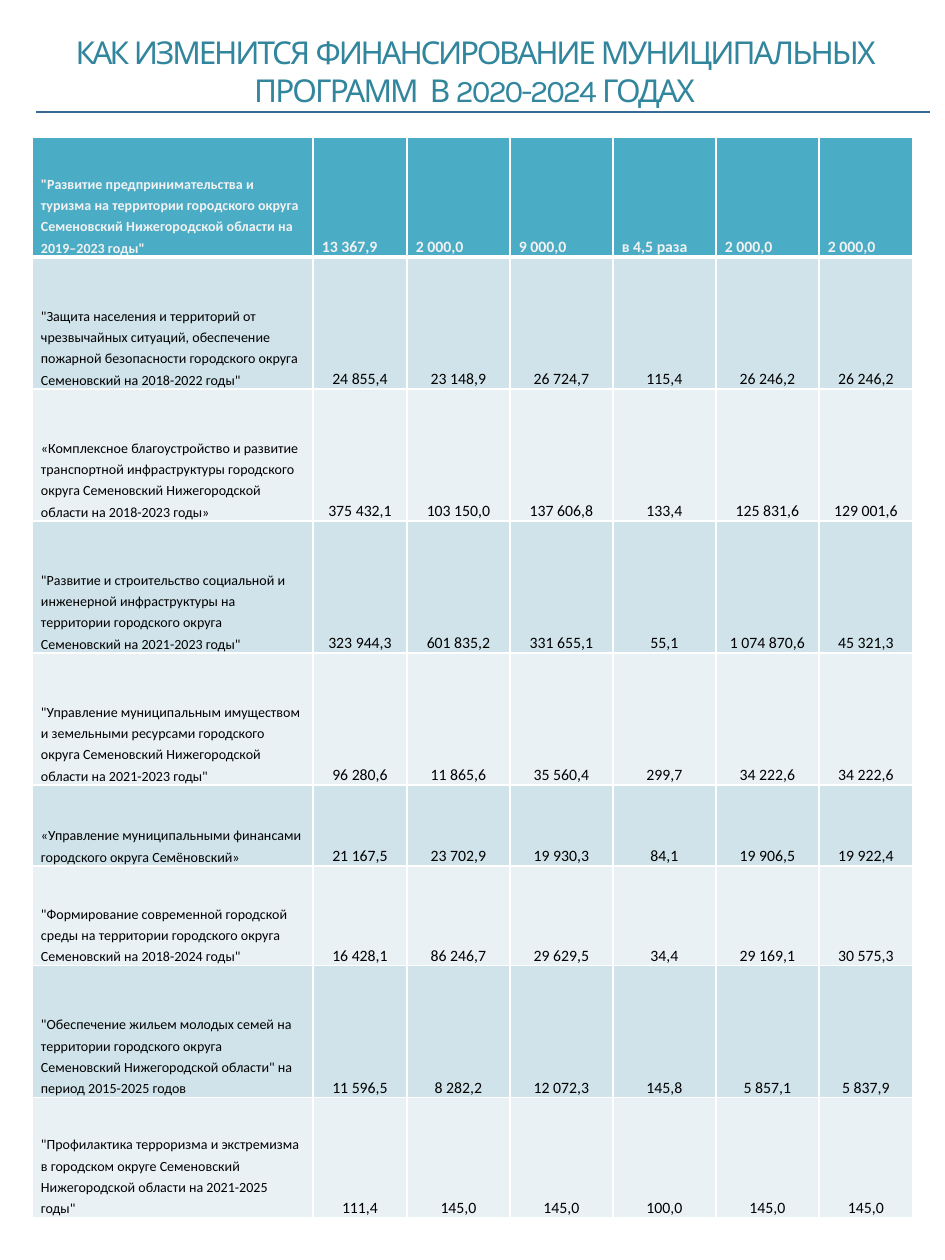
from dataclasses import dataclass

from lxml.etree import SubElement
from pptx import Presentation
from pptx.dml.color import RGBColor
from pptx.enum.shapes import MSO_CONNECTOR
from pptx.enum.text import MSO_ANCHOR, PP_ALIGN
from pptx.oxml import parse_xml
from pptx.oxml.ns import nsdecls, qn
from pptx.util import Emu, Pt

COLORS = {
    "title": "31859C",
    "rule": "3B6996",
    "header": "4BACC6",
    "header_text": "F2F2F2",
    "band_dark": "D0E3EA",
    "band_light": "E9F1F5",
    "text": "000000",
    "border": "FFFFFF",
}
COLUMN_WIDTHS = [281, 94, 103, 103, 103, 103, 94]


@dataclass
class TitlePart:
    text: str
    spacing: float


@dataclass
class Program:
    name: str
    height: int
    values: list[float | str]


TITLE = [
    TitlePart("КАК ", -1.6),
    TitlePart("ИЗМЕНИТСЯ ", -1.2),
    TitlePart("ФИНАНСИРОВАНИЕ ", -1.3),
    TitlePart("МУНИЦИПАЛЬНЫХ ПРОГРАММ  ", -1.1),
    TitlePart("В", -0.8),
    TitlePart(" 2020-2024 ", -1.2),
    TitlePart("ГОДАХ", -1.1),
]

PROGRAMS = [
    Program('"Развитие предпринимательства и туризма на территории городского округа '
            'Семеновский Нижегородской области на 2019–2023 годы"', 120,
            [13367.9, 2000.0, 9000.0, "в 4,5 раза", 2000.0, 2000.0]),
    Program('"Защита населения и территорий от чрезвычайных ситуаций, обеспечение '
            'пожарной безопасности городского округа Семеновский на 2018-2022 годы"', 132,
            [24855.4, 23148.9, 26724.7, 115.4, 26246.2, 26246.2]),
    Program('«Комплексное благоустройство и развитие транспортной инфраструктуры '
            'городского округа Семеновский Нижегородской области на 2018-2023 годы»', 132,
            [375432.1, 103150.0, 137606.8, 133.4, 125831.6, 129001.6]),
    Program('"Развитие и строительство социальной и инженерной инфраструктуры на '
            'территории городского округа Семеновский на 2021-2023 годы"', 132,
            [323944.3, 601835.2, 331655.1, 55.1, 1074870.6, 45321.3]),
    Program('"Управление муниципальным имуществом и земельными ресурсами городского '
            'округа Семеновский Нижегородской области на 2021-2023 годы"', 132,
            [96280.6, 11865.6, 35560.4, 299.7, 34222.6, 34222.6]),
    Program('«Управление муниципальными финансами городского округа Семёновский»', 81,
            [21167.5, 23702.9, 19930.3, 84.1, 19906.5, 19922.4]),
    Program('"Формирование современной городской среды на территории городского округа '
            'Семеновский на 2018-2024 годы"', 100,
            [16428.1, 86246.7, 29629.5, 34.4, 29169.1, 30575.3]),
    Program('"Обеспечение жильем молодых семей на территории городского округа '
            'Семеновский Нижегородской области" на период 2015-2025 годов', 132,
            [11596.5, 8282.2, 12072.3, 145.8, 5857.1, 5837.9]),
    Program('"Профилактика терроризма и экстремизма в городском округе Семеновский '
            'Нижегородской области на 2021-2025 годы"', 120,
            [111.4, 145.0, 145.0, 100.0, 145.0, 145.0]),
]


def px(length: int) -> Emu:
    return Emu(round(length * 914400 / 126))


def color(name: str) -> RGBColor:
    return RGBColor.from_string(COLORS[name])


def amount(value: float | str) -> str:
    if isinstance(value, str):
        return value
    return f"{value:,.1f}".replace(",", chr(160)).replace(".", ",")


def add_span(para, text: str, font: str, size: int, color_name: str, bold: bool = False):
    span = para.add_run()
    span.text = text
    span.font.name = font
    span.font.size = Pt(size)
    span.font.bold = bold
    span.font.color.rgb = color(color_name)
    return span


def draw_title(page) -> None:
    box = page.shapes.add_textbox(px(36), px(32), px(877), px(78))
    frame = box.text_frame
    frame.word_wrap = True
    frame.margin_left = frame.margin_right = frame.margin_bottom = 0
    frame.margin_top = px(1)
    para = frame.paragraphs[0]
    para.alignment = PP_ALIGN.CENTER
    para.space_before = Pt(1)
    for part in TITLE:
        span = add_span(para, part.text, "Karla", 18, "title")
        span.font._element.set("spc", str(round(part.spacing * 100)))


def draw_rule(page) -> None:
    rule = page.shapes.add_connector(MSO_CONNECTOR.STRAIGHT, px(36), px(112), px(930), px(112))
    rule.line.color.rgb = color("rule")
    rule.line.width = Pt(0.75)
    SubElement(rule._element.spPr, qn("a:effectLst"))


def set_borders(cell, top: int, bottom: int) -> None:
    properties = cell._tc.get_or_add_tcPr()
    widths = {"lnL": 1, "lnR": 1, "lnT": top, "lnB": bottom}
    for index, (side, width) in enumerate(widths.items()):
        properties.insert(index, parse_xml(
            f'<a:{side} {nsdecls("a")} w="{Pt(width)}"><a:solidFill>'
            f'<a:srgbClr val="{COLORS["border"]}"/></a:solidFill></a:{side}>'))


def draw_cell(cell, text: str, row: int, column: int) -> None:
    header = row == 0
    band = "band_dark" if row % 2 else "band_light"
    cell.fill.solid()
    cell.fill.fore_color.rgb = color("header" if header else band)
    cell.vertical_anchor = MSO_ANCHOR.BOTTOM
    cell.margin_left = cell.margin_right = px(9)
    cell.margin_top = cell.margin_bottom = 0
    set_borders(cell, 3 if row == 1 else 1, 3 if header else 1)
    para = cell.text_frame.paragraphs[0]
    para.line_spacing = Pt(12.2)
    para.alignment = PP_ALIGN.LEFT if header or column == 0 else PP_ALIGN.CENTER
    add_span(para, text, "Calibri", 9 if column else 8,
             "header_text" if header else "text", header)


def draw_table(page, programs: list[Program]) -> None:
    height = sum(program.height for program in programs)
    table = page.shapes.add_table(len(programs), len(COLUMN_WIDTHS), px(32), px(137),
                                  px(sum(COLUMN_WIDTHS)), px(height)).table
    for column, width in zip(table.columns, COLUMN_WIDTHS):
        column.width = px(width)
    for row, program in enumerate(programs):
        table.rows[row].height = px(program.height)
        texts = [program.name, *map(amount, program.values)]
        for column, text in enumerate(texts):
            draw_cell(table.cell(row, column), text, row, column)


def main() -> None:
    deck = Presentation()
    deck.slide_width, deck.slide_height = px(945), px(1260)
    page = deck.slides.add_slide(deck.slide_layouts[6])
    draw_table(page, PROGRAMS)
    draw_title(page)
    draw_rule(page)
    deck.save("out.pptx")


if __name__ == "__main__":
    main()
